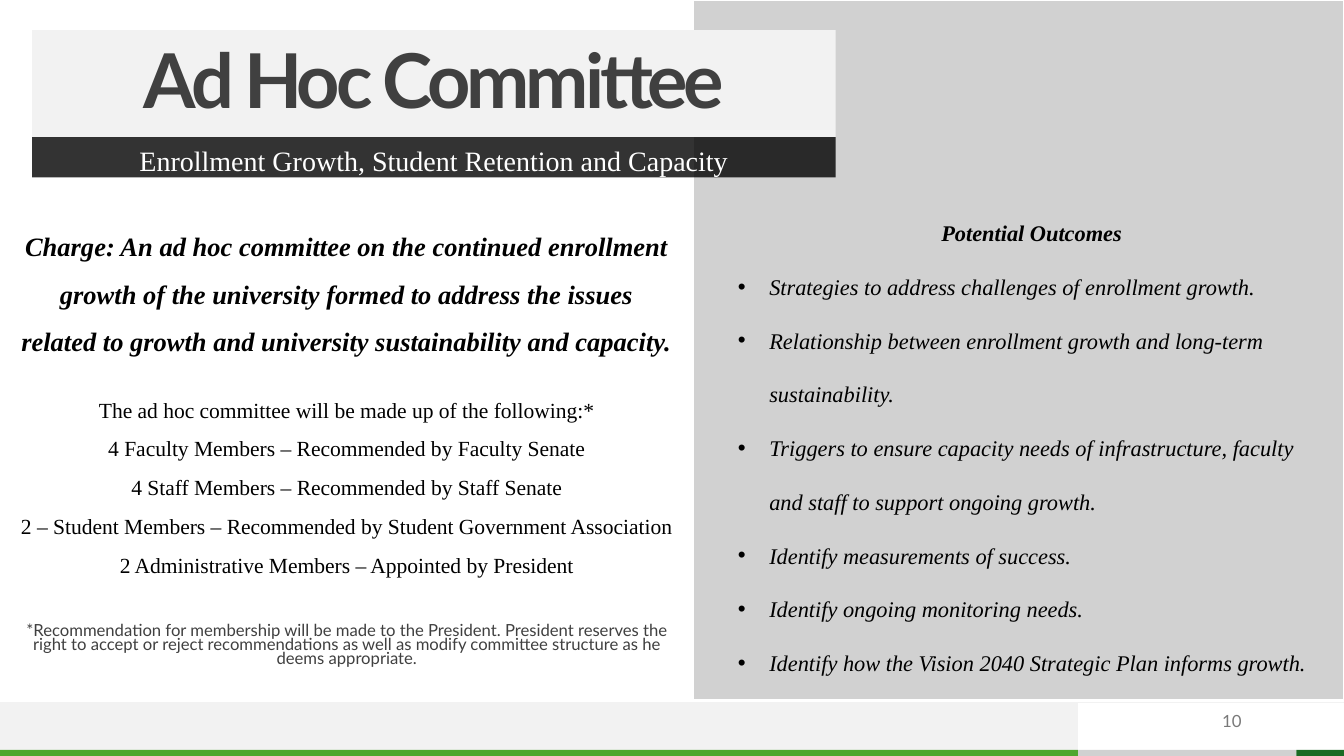
import pptx
import pptx.dml.color
import pptx.enum.shapes
import pptx.enum.text
import pptx.oxml.ns
import pptx.util
from lxml import etree

Pt = pptx.util.Pt
qn = pptx.oxml.ns.qn
ALIGN = pptx.enum.text.PP_ALIGN
ANCHOR = pptx.enum.text.MSO_ANCHOR
SERIF, SANS = "Times New Roman", "Lato"
COLORS = {
    "white": "FFFFFF", "black": "000000", "pale": "F2F2F2", "gray": "D1D1D1",
    "text": "404040", "number": "797979", "green": "4EA72E", "forest": "196B24",
}
MEMBERS = [
    "The ad hoc committee will be made up of the following:*",
    "4 Faculty Members – Recommended by Faculty Senate",
    "4 Staff Members – Recommended by Staff Senate",
    "2 – Student Members – Recommended by Student Government Association",
    "2 Administrative Members – Appointed by President",
]
GOALS = [
    "Strategies to address challenges of enrollment growth.",
    "Relationship between enrollment growth and long-term sustainability.",
    "Triggers to ensure capacity needs of infrastructure, faculty and staff to support ongoing growth.",
    "Identify measurements of success.",
    "Identify ongoing monitoring needs.",
    "Identify how the Vision 2040 Strategic Plan informs growth.",
]


def tint(name):
    """Return the named colour."""
    return pptx.dml.color.RGBColor.from_string(COLORS[name])


def paint(shape, name):
    """Fill a shape with the named colour."""
    shape.fill.solid()
    shape.fill.fore_color.rgb = tint(name)


def block(slide, box, name):
    """Add a plain rectangle."""
    kind = pptx.enum.shapes.MSO_SHAPE.RECTANGLE
    shape = slide.shapes.add_shape(kind, *map(Pt, box))
    shape.shadow.inherit = False
    paint(shape, name)
    shape.line.fill.background()
    return shape


def place(shape, box, anchor=ANCHOR.TOP, inset=(7.2, 3.6, 7.2, 3.6)):
    """Move a text shape to the front and into its box."""
    shape.left, shape.top, shape.width, shape.height = map(Pt, box)
    shape.element.getparent().append(shape.element)
    frame = shape.text_frame
    frame.word_wrap = True
    frame.auto_size = pptx.enum.text.MSO_AUTO_SIZE.NONE
    frame.vertical_anchor = anchor
    frame.margin_left, frame.margin_top, frame.margin_right, frame.margin_bottom = map(Pt, inset)
    return frame


def write(para, text, size, color="black", face=SERIF, bold=False, slant=False,
          align=ALIGN.CENTER, lead=1.0, above=0, mark=False):
    """Set and format one paragraph."""
    para.text = text
    props = para._p.get_or_add_pPr()
    indent = Pt(22.5) if mark else 0
    props.set("marL", str(indent))
    props.set("indent", str(-indent))
    if mark:
        etree.SubElement(props, qn("a:buFont")).set("typeface", "Arial")
        etree.SubElement(props, qn("a:buChar")).set("char", "•")
    else:
        etree.SubElement(props, qn("a:buNone"))
    para.alignment = align
    para.line_spacing = lead
    para.space_before = Pt(above)
    para.space_after = Pt(0)
    for run in para.runs:
        font = run.font
        font.size, font.name, font.bold, font.italic = Pt(size), face, bold, slant
        font.color.rgb = tint(color)


def footer(slide, box):
    """Draw the bottom band, its stripes and the page number."""
    left, top, width, height = box
    rule, split, end = 4.4, 770, 926
    base = top + height - rule
    block(slide, (left + split, base, end - split, rule), "gray")
    block(slide, (left, top, split, height - rule), "pale")
    block(slide, (left, base, split, rule), "green")
    block(slide, (left + end, base, width - end, rule), "forest")
    line = slide.shapes.add_connector(
        pptx.enum.shapes.MSO_CONNECTOR.STRAIGHT, Pt(left + width), Pt(top), Pt(left), Pt(top))
    line.line.color.rgb = tint("pale")
    line.line.width = Pt(1)
    etree.SubElement(line.element.spPr, qn("a:effectLst"))
    spot = (left + 678, top - 1.5, 216, 29)
    frame = place(slide.shapes.add_textbox(*map(Pt, spot)), spot, ANCHOR.MIDDLE)
    write(frame.paragraphs[0], "10", 12, "number", SANS, align=ALIGN.RIGHT)


def header(title, sub, box):
    """Fill the title box and the dark strip below it."""
    left, top, width, height = box
    strip = 28.8
    frame = place(title, (left, top, width, height - strip), ANCHOR.MIDDLE, (14.4,) * 4)
    paint(title, "pale")
    write(frame.paragraphs[0], "Ad Hoc Committee", 54, "text", SANS, True, lead=0.9)
    for run in frame.paragraphs[0].runs:
        run._r.get_or_add_rPr().set("spc", "-300")
    frame = place(sub, (left, top + height - strip, width, strip), inset=(7.2, 0, 7.2, 0))
    paint(sub, "black")
    for color in sub.element.spPr.iter(qn("a:srgbClr")):
        etree.SubElement(color, qn("a:alpha")).set("val", "80000")
    write(frame.paragraphs[0], "Enrollment Growth, Student Retention and Capacity", 20, "white", lead=1.2)


def charge(body, box):
    """Write the charge, the members and the footnote."""
    frame = place(body, box, inset=(7.2, 18.4, 7.2, 3.6))
    write(frame.paragraphs[0],
          "Charge: An ad hoc committee on the continued enrollment growth of the university "
          "formed to address the issues related to growth and university sustainability and capacity.",
          18.9, bold=True, slant=True, lead=1.5)
    for rank, text in enumerate(MEMBERS):
        write(frame.add_paragraph(), text, 15.4, lead=1.5, above=0 if rank else 19)
    write(frame.add_paragraph(),
          "*Recommendation for membership will be made to the President. President reserves the right "
          "to accept or reject recommendations as well as modify committee structure as he deems appropriate.",
          11.9, "text", SANS, lead=0.7, above=34)


def goals(body, box):
    """Write the bulleted outcomes."""
    frame = place(body, box)
    write(frame.paragraphs[0], "Potential Outcomes", 16, bold=True, slant=True, lead=2.0)
    for text in GOALS:
        write(frame.add_paragraph(), text, 16, slant=True, align=ALIGN.LEFT, lead=2.0, mark=True)


def main():
    """Build and save the slide."""
    deck = pptx.Presentation()
    deck.slide_width, deck.slide_height = Pt(960), Pt(540)
    slide = deck.slides.add_slide(deck.slide_layouts.get_by_name("Comparison"))
    title, sub, left, spare, right = slide.placeholders
    spare.element.getparent().remove(spare.element)
    footer(slide, (0, 502, 960, 38))
    panel = block(slide, (495.2, 0, 464.8, 500.4), "gray")
    panel.line.color.rgb = tint("white")
    panel.line.width = Pt(1.5)
    header(title, sub, (23, 21.6, 574, 105.1))
    charge(left, (6.5, 134.6, 482.4, 359.3))
    goals(right, (519.8, 133.9, 434.2, 350.6))
    deck.save("out.pptx")


if __name__ == "__main__":
    main()
